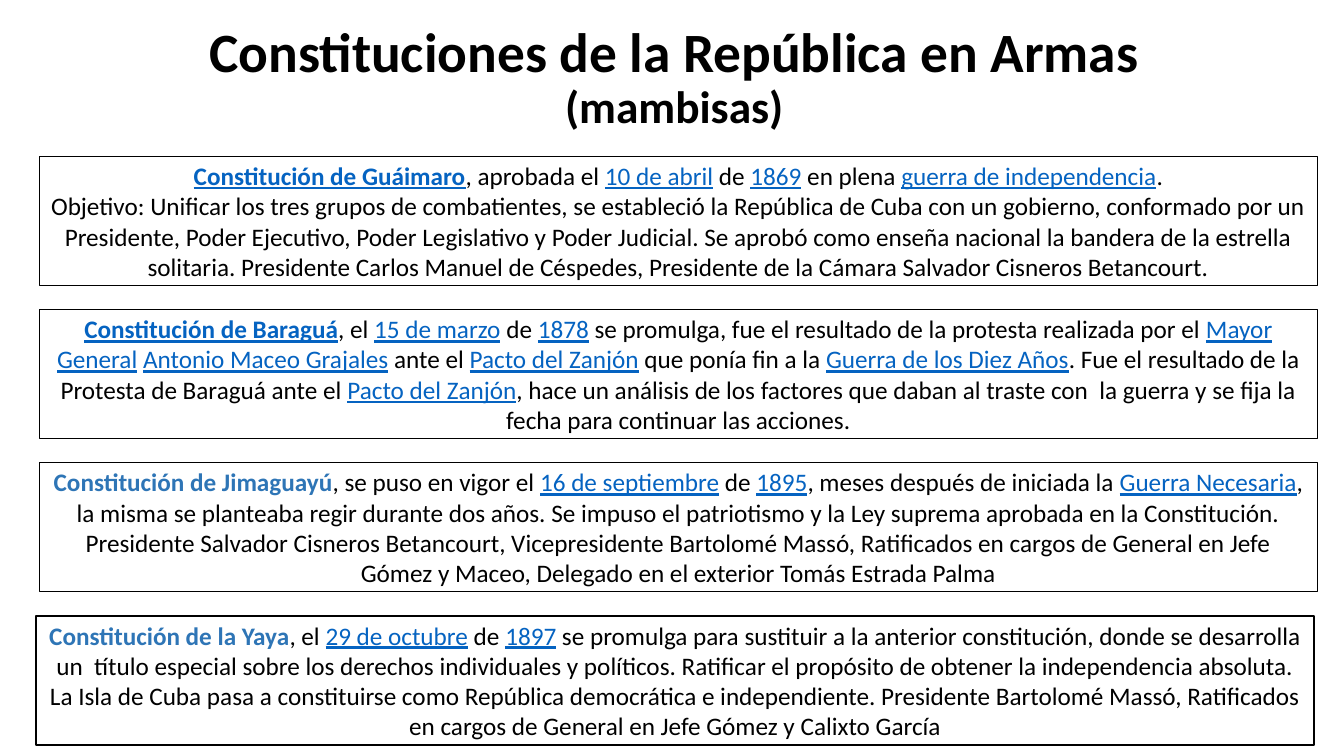
from pptx import Presentation
from pptx.dml.color import RGBColor
from pptx.enum.shapes import MSO_SHAPE
from pptx.enum.text import MSO_ANCHOR, PP_ALIGN
from pptx.util import Cm, Pt

COLOURS = {"paper": "FFFFFF", "ink": "000000", "link": "0563C1", "heading": "2E75B6"}

STYLES = {
    "plain": {},
    "link": {"colour": "link", "underline": True},
    "linked heading": {"colour": "link", "underline": True, "bold": True},
    "heading": {"colour": "heading", "bold": True},
}

GUAIMARO = [
    [
        ("Constitución de Guáimaro", "linked heading"),
        (", aprobada el ", "plain"),
        ("10 de abril", "link"),
        (" de ", "plain"),
        ("1869", "link"),
        (" en plena ", "plain"),
        ("guerra de independencia", "link"),
        (".", "plain"),
    ],
    [
        ("Objetivo: Unificar los tres grupos de combatientes, se estableció la República "
         "de Cuba con un gobierno, conformado por un Presidente, Poder Ejecutivo, Poder "
         "Legislativo y Poder Judicial. Se aprobó como enseña nacional la bandera de la "
         "estrella solitaria. Presidente Carlos Manuel de Céspedes, Presidente de la "
         "Cámara Salvador Cisneros Betancourt.", "plain"),
    ],
]

BARAGUA = [
    [
        ("Constitución de Baraguá", "linked heading"),
        (", el ", "plain"),
        ("15 de marzo", "link"),
        (" de ", "plain"),
        ("1878", "link"),
        (" se promulga, fue el resultado de la protesta realizada por el ", "plain"),
        ("Mayor General", "link"),
        (" ", "plain"),
        ("Antonio Maceo Grajales", "link"),
        (" ante el ", "plain"),
        ("Pacto del Zanjón", "link"),
        (" que ponía fin a la ", "plain"),
        ("Guerra de los Diez Años", "link"),
        (". Fue el resultado de la Protesta de Baraguá ante el ", "plain"),
        ("Pacto del Zanjón", "link"),
        (", hace un análisis de los factores que daban al traste con  la guerra y se fija "
         "la fecha para continuar las acciones.", "plain"),
    ],
]

JIMAGUAYU = [
    [
        ("Constitución de Jimaguayú", "heading"),
        (", se puso en vigor el ", "plain"),
        ("16 de septiembre", "link"),
        (" de ", "plain"),
        ("1895", "link"),
        (", meses después de iniciada la ", "plain"),
        ("Guerra Necesaria", "link"),
        (", la misma se planteaba regir durante dos años. Se impuso el patriotismo y la "
         "Ley suprema aprobada en la Constitución. Presidente Salvador Cisneros "
         "Betancourt, Vicepresidente Bartolomé Massó, Ratificados en cargos de General "
         "en Jefe Gómez y Maceo, Delegado en el exterior Tomás Estrada Palma", "plain"),
    ],
]

YAYA = [
    [
        ("Constitución de la Yaya", "heading"),
        (", el ", "plain"),
        ("29 de octubre", "link"),
        (" de ", "plain"),
        ("1897", "link"),
        (" se promulga para sustituir a la anterior constitución, donde se desarrolla un  "
         "título especial sobre los derechos individuales y políticos. Ratificar el "
         "propósito de obtener la independencia absoluta. La Isla de Cuba pasa a "
         "constituirse como República democrática e independiente. Presidente Bartolomé "
         "Massó, Ratificados en cargos de General en Jefe Gómez y Calixto García", "plain"),
    ],
]

CONSTITUTIONS = [(0.99, GUAIMARO), (0.99, BARAGUA), (0.99, JIMAGUAYU), (0.91, YAYA)]
FIRST_TOP, PITCH = 3.94, 3.86
BOX_WIDTH, BOX_HEIGHT = 32.21, 3.25


def colour_of(name):
    """Return the named colour of the palette."""
    return RGBColor.from_string(COLOURS[name])


def add_span(para, text, size=18, colour="ink", bold=False, underline=False):
    """Append formatted text to a paragraph."""
    span = para.add_run()
    span.text = text
    span.font.name = "Calibri"
    span.font.size = Pt(size)
    span.font.bold = bold
    span.font.underline = underline
    span.font.color.rgb = colour_of(colour)


def add_title(page, heading, subheading):
    """Add the centred title with its smaller second line."""
    box = page.shapes.add_textbox(Cm(2.39), Cm(0.66), Cm(29.21), Cm(2.64))
    frame = box.text_frame
    frame.word_wrap = True
    frame.vertical_anchor = MSO_ANCHOR.MIDDLE
    para = frame.paragraphs[0]
    para.alignment = PP_ALIGN.CENTER
    para.line_spacing = 0.9
    add_span(para, heading, size=39.6, bold=True)
    para.add_line_break()
    add_span(para, subheading, size=32.4, bold=True)


def add_constitution(page, left, top, paragraphs):
    """Add an outlined box that describes one constitution."""
    box = page.shapes.add_shape(
        MSO_SHAPE.RECTANGLE, Cm(left), Cm(top), Cm(BOX_WIDTH), Cm(BOX_HEIGHT))
    box.shadow.inherit = False
    box.fill.solid()
    box.fill.fore_color.rgb = colour_of("paper")
    box.line.color.rgb = colour_of("ink")
    box.line.width = Pt(1)
    frame = box.text_frame
    frame.word_wrap = True
    frame.vertical_anchor = MSO_ANCHOR.MIDDLE
    for index, spans in enumerate(paragraphs):
        para = frame.add_paragraph() if index else frame.paragraphs[0]
        para.alignment = PP_ALIGN.CENTER
        for text, style in spans:
            add_span(para, text, **STYLES[style])


def main():
    """Build and save the slide."""
    deck = Presentation()
    deck.slide_width, deck.slide_height = Cm(33.87), Cm(19.05)
    page = deck.slides.add_slide(deck.slide_layouts[6])
    add_title(page, "Constituciones de la República en Armas", "(mambisas)")
    for row, (left, paragraphs) in enumerate(CONSTITUTIONS):
        add_constitution(page, left, FIRST_TOP + row * PITCH, paragraphs)
    deck.save("out.pptx")


if __name__ == "__main__":
    main()
